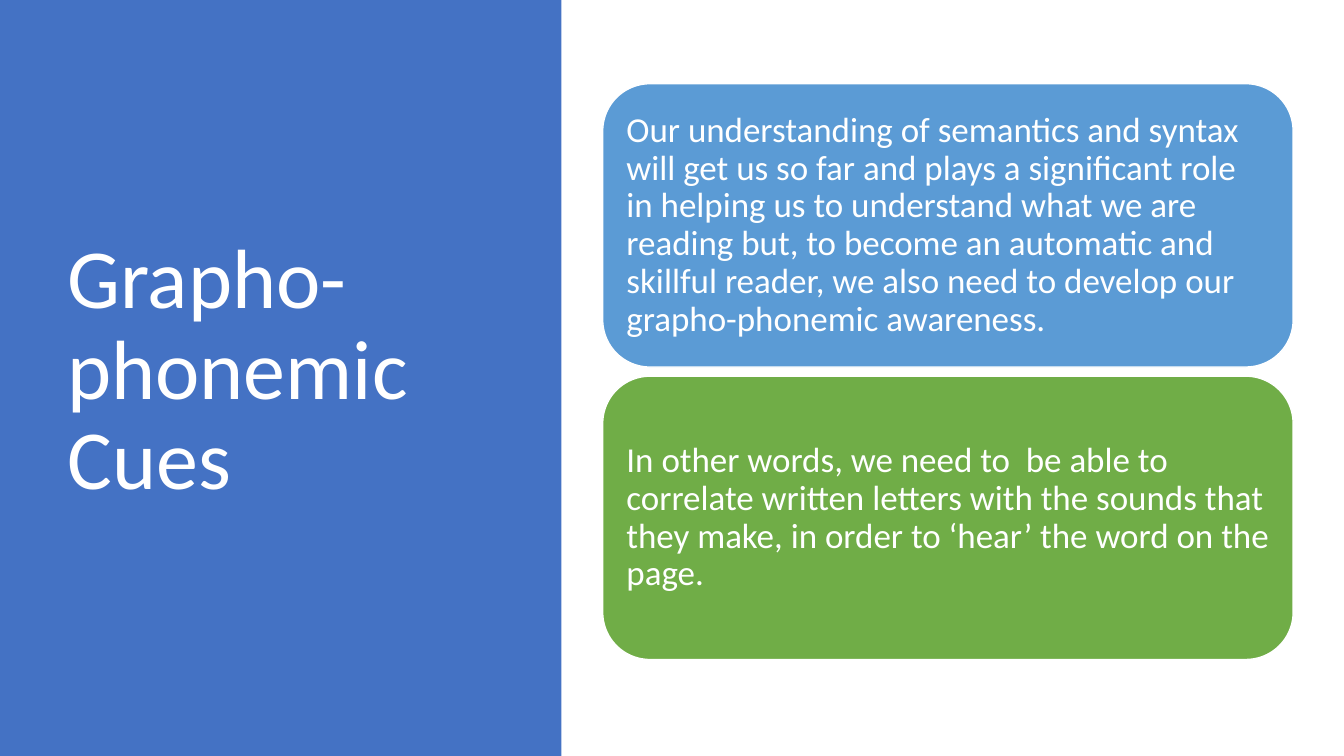
from pptx import Presentation
from pptx.dml.color import RGBColor
from pptx.enum.shapes import MSO_SHAPE
from pptx.enum.text import MSO_ANCHOR, PP_ALIGN
from pptx.util import Cm, Pt


def color(value):
    """Turn a hex string into a colour."""
    return RGBColor.from_string(value)


def apply_formats(target, formats):
    """Set each format value on the target."""
    for name, value in formats.items():
        setattr(target, name, value)


class CueSlide:
    """Hold the style and the current slide."""

    font = "Calibri"
    white = "FFFFFF"

    def __init__(self, deck):
        """Add a blank page to the deck."""
        self.page = deck.slides.add_slide(deck.slide_layouts[6])

    def fill_text(self, shape, text, size, inset):
        """Put white, vertically centred text into a shape."""
        frame = shape.text_frame
        apply_formats(frame, {
            "word_wrap": True,
            "vertical_anchor": MSO_ANCHOR.MIDDLE,
            "margin_left": Cm(0.25),
            "margin_right": Cm(0.25),
            "margin_top": Cm(inset),
            "margin_bottom": Cm(inset),
        })
        para = frame.paragraphs[0]
        apply_formats(para, {"alignment": PP_ALIGN.LEFT, "line_spacing": 0.9})
        span = para.add_run()
        span.text = text
        apply_formats(span.font, {"name": self.font, "size": Pt(size)})
        span.font.color.rgb = color(self.white)

    def panel(self, kind, place, fill):
        """Draw a filled shape without an outline."""
        shape = self.page.shapes.add_shape(kind, *map(Cm, place))
        shape.shadow.inherit = False
        shape.fill.solid()
        shape.fill.fore_color.rgb = color(fill)
        shape.line.fill.background()
        return shape

    def title(self, text, place):
        """Add the large title."""
        box = self.page.shapes.add_textbox(*map(Cm, place))
        self.fill_text(box, text, 60, 0.13)

    def card(self, text, place, fill):
        """Add a rounded card with a white outline."""
        shape = self.panel(MSO_SHAPE.ROUNDED_RECTANGLE, place, fill)
        shape.line.color.rgb = color(self.white)
        shape.line.width = Pt(1)
        self.fill_text(shape, text, 25, 0.25)


def main():
    """Build and save the deck."""
    deck = Presentation()
    apply_formats(deck, {"slide_width": Cm(33.87), "slide_height": Cm(19.05)})
    slide = CueSlide(deck)
    slide.panel(MSO_SHAPE.RECTANGLE, (0, 0, 14.15, 19.05), "4472C4")
    slide.title("Grapho-phonemic Cues", (1.45, 1.73, 10.57, 15.29))
    cards = [
        ("Our understanding of semantics and syntax will get us so far and "
         "plays a significant role in helping us to understand what we are "
         "reading but, to become an automatic and skillful reader, we also "
         "need to develop our grapho-phonemic awareness.", "5B9BD5"),
        ("In other words, we need to  be able to correlate written letters "
         "with the sounds that they make, in order to ‘hear’ the word on "
         "the page.", "70AD47"),
    ]
    height, gap = 7.14, 0.23
    for index, (text, fill) in enumerate(cards):
        top = 2.11 + index * (height + gap)
        slide.card(text, (15.19, top, 17.4, height), fill)
    deck.save("out.pptx")


if __name__ == "__main__":
    main()
